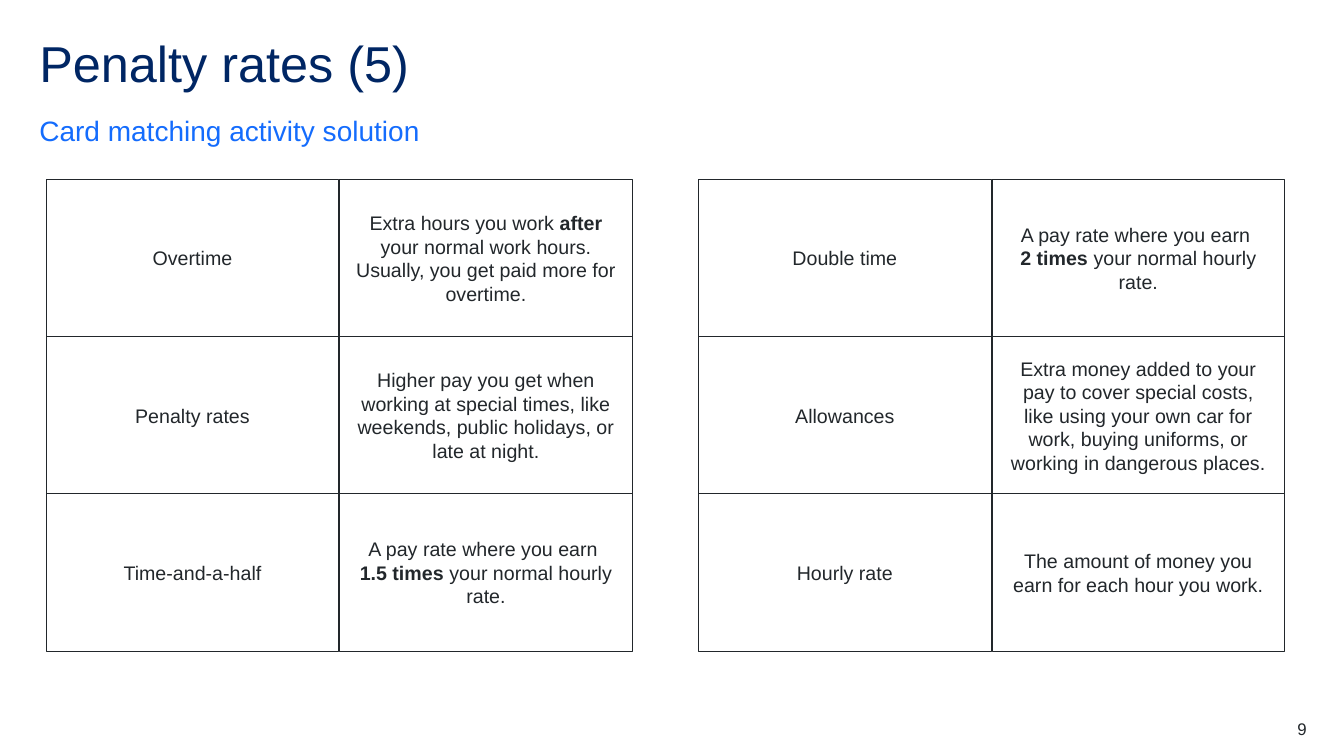
from pptx import Presentation
from pptx.dml.color import RGBColor
from pptx.enum.shapes import MSO_SHAPE
from pptx.enum.text import MSO_ANCHOR, PP_ALIGN
from pptx.util import Inches, Pt

NAVY = RGBColor(0x00, 0x26, 0x64)
BLUE = RGBColor(0x14, 0x6C, 0xFD)
INK = RGBColor(0x22, 0x27, 0x2B)

RECTANGLE = MSO_SHAPE.RECTANGLE
TOP, MIDDLE, BOTTOM = MSO_ANCHOR.TOP, MSO_ANCHOR.MIDDLE, MSO_ANCHOR.BOTTOM
LEFT, CENTER, RIGHT = PP_ALIGN.LEFT, PP_ALIGN.CENTER, PP_ALIGN.RIGHT

FONT = "Arial"
CARD_WIDTH, CARD_HEIGHT = 2.9, 1.56
CARD_STEP = 2.91
CARDS_TOP = 1.78
COLUMN_LEFTS = (0.46, 6.93)

# Each column holds (term, definition) pairs; ** marks bold words.
COLUMNS = (
    (
        ("Overtime",
         "Extra hours you work **after** your normal work hours. "
         "Usually, you get paid more for overtime."),
        ("Penalty rates",
         "Higher pay you get when working at special times, like weekends, "
         "public holidays, or late at night."),
        ("Time-and-a-half",
         "A pay rate where you earn \n**1.5 times** your normal hourly rate."),
    ),
    (
        ("Double time",
         "A pay rate where you earn \n**2 times **your normal hourly rate."),
        ("Allowances",
         "Extra money added to your pay to cover special costs, like using "
         "your own car for work, buying uniforms, or working in dangerous "
         "places."),
        ("Hourly rate",
         "The amount of money you earn for each hour you work."),
    ),
)


def write_text(box, text, size=14, color=INK, align=LEFT, anchor=TOP,
               margin=0, line_spacing=None, space_after=None):
    """Fill a shape with one paragraph; ** toggles bold and \\n breaks a line."""
    frame = box.text_frame
    frame.word_wrap = True
    frame.vertical_anchor = anchor
    frame.margin_left = frame.margin_right = Inches(margin)
    frame.margin_top = frame.margin_bottom = Inches(margin)
    para = frame.paragraphs[0]
    para.alignment = align
    para.line_spacing = line_spacing
    para.space_after = space_after
    for part_index, part in enumerate(text.split("**")):
        for line_index, line in enumerate(part.split("\n")):
            if line_index:
                para.add_line_break()
            if line:
                span = para.add_run()
                span.text = line
                span.font.name = FONT
                span.font.size = Pt(size)
                span.font.bold = part_index % 2 == 1
                span.font.color.rgb = color


def add_text(page, left, top, width, height, text, **text_format):
    box = page.shapes.add_textbox(Inches(left), Inches(top),
                                  Inches(width), Inches(height))
    write_text(box, text, **text_format)


def add_card(group, left, top, text):
    card = group.shapes.add_shape(RECTANGLE, Inches(left), Inches(top),
                                  Inches(CARD_WIDTH), Inches(CARD_HEIGHT))
    card.shadow.inherit = False
    card.fill.background()
    card.line.color.rgb = INK
    card.line.width = Pt(0.75)
    write_text(card, text, align=CENTER, anchor=MIDDLE, margin=0.16)


def add_card_column(page, left, pairs):
    """Stack term and definition cards, each pair grouped."""
    for row, pair in enumerate(pairs):
        group = page.shapes.add_group_shape()
        for side, text in enumerate(pair):
            add_card(group, left + side * CARD_STEP,
                     CARDS_TOP + row * CARD_HEIGHT, text)


def main():
    deck = Presentation()
    deck.slide_width, deck.slide_height = Inches(13.33), Inches(7.5)
    page = deck.slides.add_slide(deck.slide_layouts[6])

    add_text(page, 0.39, 0.39, 12.56, 0.6, "Penalty rates (5)",
             size=36, color=NAVY, line_spacing=0.9)
    add_text(page, 0.39, 1.07, 12.56, 0.39, "Card matching activity solution",
             size=20, color=BLUE, anchor=BOTTOM, line_spacing=1.5,
             space_after=Pt(12))
    for left, pairs in zip(COLUMN_LEFTS, COLUMNS):
        add_card_column(page, left, pairs)
    add_text(page, 12.17, 7.13, 0.79, 0.2, "9", size=12, align=RIGHT)

    deck.save("out.pptx")


if __name__ == "__main__":
    main()
